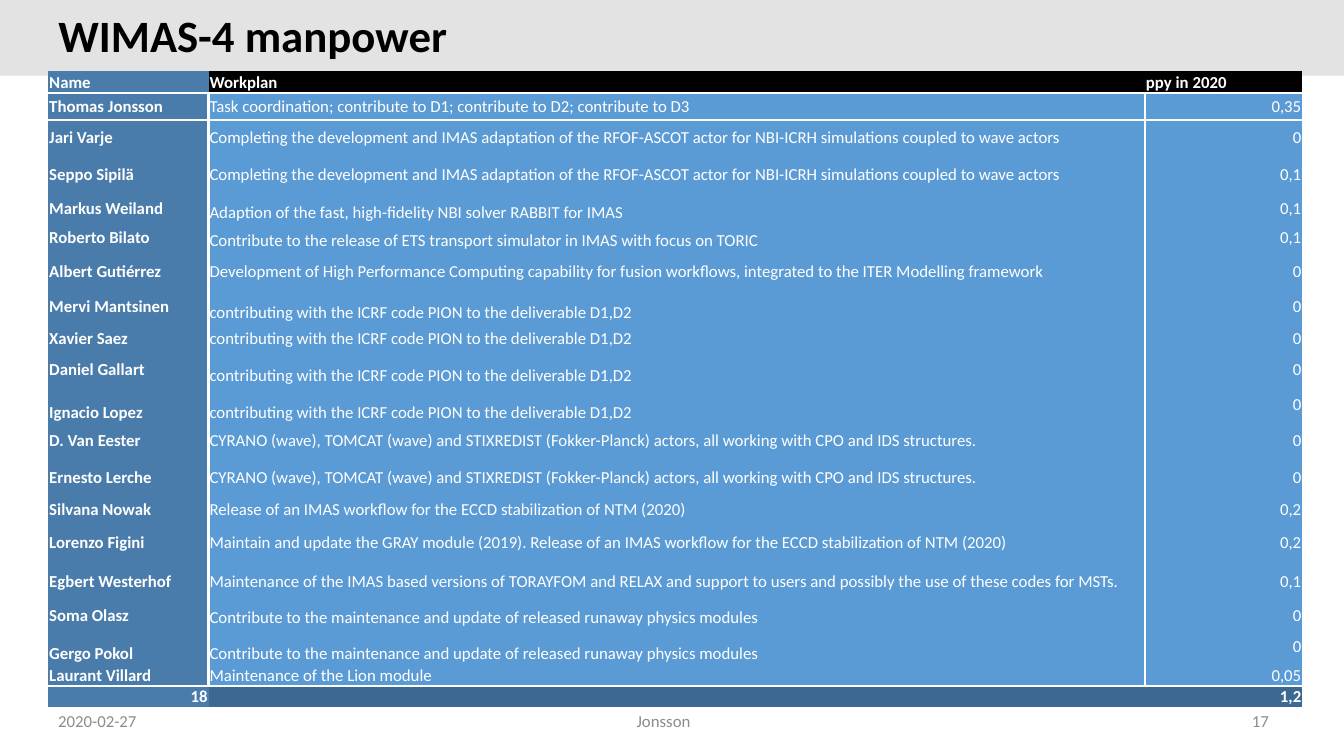
from pptx import Presentation
from pptx import util as u
from pptx.dml import color
from pptx.enum import shapes, text
from pptx.oxml import parse_xml
from pptx.oxml import ns

Pt = u.Pt
LEFT, MID, RIGHT = text.PP_ALIGN.LEFT, text.PP_ALIGN.CENTER, text.PP_ALIGN.RIGHT
ANCHORS = {"m": text.MSO_ANCHOR.MIDDLE, "b": text.MSO_ANCHOR.BOTTOM}
PLAIN = "{2D5ABB26-0587-4C30-8999-92F81FD0307C}"
WHITE, BLACK, NAVY, BLUE, DEEP = "FFFFFF", "000000", "497CAB", "5B9BD5", "3D688F"

NBI = "Completing the development and IMAS adaptation of the RFOF-ASCOT actor for NBI-ICRH simulations coupled to wave actors"
PION = "contributing with the ICRF code PION to the deliverable D1,D2"
WAVE = "CYRANO (wave), TOMCAT (wave) and STIXREDIST (Fokker-Planck) actors, all working with CPO and IDS structures."
RUN = "Contribute to the maintenance and update of released runaway physics modules"
STAFF = [
    ("Thomas Jonsson", "Task coordination; contribute to D1; contribute to D2; contribute to D3", "0,35", "mmm", 19.4),
    ("Jari Varje", NBI, "0", "mmm", 24.5),
    ("Seppo Sipilä", NBI, "0,1", "mmm", 28.1),
    ("Markus Weiland", "Adaption of the fast, high-fidelity NBI solver RABBIT for IMAS", "0,1", "mbm", 20.9),
    ("Roberto Bilato", "Contribute to the release of ETS transport simulator in IMAS with focus on TORIC", "0,1", "mbm", 20.2),
    ("Albert Gutiérrez", "Development of High Performance Computing capability for fusion workflows, integrated to the ITER Modelling framework", "0", "mmm", 28.1),
    ("Mervi Mantsinen", PION, "0", "mbm", 23),
    ("Xavier Saez", PION, "0", "mmm", 21.6),
    ("Daniel Gallart", PION, "0", "mbm", 23.8),
    ("Ignacio Lopez", PION, "0", "bbm", 25.9),
    ("D. Van Eester", WAVE, "0", "mmm", 25.9),
    ("Ernesto Lerche", WAVE, "0", "mmm", 25.9),
    ("Silvana Nowak", "Release of an IMAS workflow for the ECCD stabilization of NTM (2020)", "0,2", "mmm", 20.2),
    ("Lorenzo Figini", "Maintain and update the GRAY module (2019). Release of an IMAS workflow for the ECCD stabilization of NTM (2020)", "0,2", "mmm", 26.6),
    ("Egbert Westerhof", "Maintenance of the IMAS based versions of TORAYFOM and RELAX and support to users and possibly the use of these codes for MSTs.", "0,1", "mmm", 29.5),
    ("Soma Olasz", RUN, "0", "mbm", 18.7),
    ("Gergo Pokol", RUN, "0", "bbm", 25.9),
    ("Laurant Villard", "Maintenance of the Lion module", "0,05", "mbm", 15.4),
]
HEAD = ("Name", "Workplan", "ppy in 2020", "bbb", 15.5)
TOTAL = ("18", "", "1,2", "bbb", 15.5)


def rgb(code):
    return color.RGBColor.from_string(code)


def style(para, size, code, bold=False, align=LEFT):
    para.alignment = align
    for run in para.runs:
        run.font.name = "Calibri"
        run.font.size = Pt(size)
        run.font.bold = bold
        run.font.color.rgb = rgb(code)


def add_band(slide):
    band = slide.shapes.add_shape(shapes.MSO_SHAPE.RECTANGLE, 0, 0, Pt(960), Pt(54))
    band.shadow.inherit = False
    band.fill.solid()
    band.fill.fore_color.rgb = rgb("E3E3E3")
    band.line.fill.background()
    slide.shapes._spTree.insert(2, band._element)


def set_title(slide, words):
    title = slide.shapes.title
    title.left, title.top, title.width, title.height = Pt(34.5), Pt(9.4), Pt(831), Pt(35.3)
    frame = title.text_frame
    frame.text = words
    frame.vertical_anchor = ANCHORS["m"]
    para = frame.paragraphs[0]
    para.line_spacing = 0.9
    style(para, 32, BLACK, True)


def add_note(slide, words, left, width, align):
    frame = slide.shapes.add_textbox(Pt(left), Pt(500.4), Pt(width), Pt(28.8)).text_frame
    frame.word_wrap = True
    frame.vertical_anchor = ANCHORS["m"]
    frame.text = words
    style(frame.paragraphs[0], 12, "8C8C8C", align=align)


def add_edge(cell, side):
    cell._tc.get_or_add_tcPr().append(parse_xml(
        f'<a:ln{side} {ns.nsdecls("a")} w="25400"><a:solidFill>'
        f'<a:srgbClr val="{WHITE}"/></a:solidFill></a:ln{side}>'))


def fill_cell(cell, words, anchor, code, bold, align, edges):
    cell.margin_left = cell.margin_right = cell.margin_top = Pt(0.7)
    cell.margin_bottom = 0
    cell.vertical_anchor = ANCHORS[anchor]
    para = cell.text_frame.paragraphs[0]
    if words:
        para.text = words
        style(para, 12, WHITE, bold, align)
    else:
        para._p.get_or_add_endParaRPr().set("sz", "1200")
    for side in edges:
        add_edge(cell, side)
    cell.fill.solid()
    cell.fill.fore_color.rgb = rgb(code)


def add_staff(slide):
    rows = [HEAD, *STAFF, TOTAL]
    last = len(rows) - 1
    high = sum(row[4] for row in rows)
    frame = slide.shapes.add_table(len(rows), 3, Pt(34.5), Pt(51), Pt(895.7), Pt(high))
    for tag in frame._element.iter(ns.qn("a:tableStyleId")):
        tag.text = PLAIN
    table = frame.table
    table.horz_banding = False
    for col, width in zip(table.columns, (114.5, 668.9, 112.3)):
        col.width = Pt(width)
    for r, row in enumerate(rows):
        table.rows[r].height = Pt(row[4])
        body = 0 < r < last
        tone = BLUE if body else BLACK if r == 0 else DEEP
        for c in range(3):
            edges = ["R"] if body and c == 0 else ["L"] if body and c == 1 else []
            edges += ["T"] if r in (1, last) else []
            edges += ["B"] if r in (0, last - 1) else []
            right = r > 0 and c == 2 or r == last
            fill_cell(table.cell(r, c), row[c], row[3][c], tone if c else NAVY,
                      c == 0 or not body, RIGHT if right else LEFT, edges)


def main():
    deck = Presentation()
    deck.slide_width, deck.slide_height = Pt(960), Pt(540)
    slide = deck.slides.add_slide(deck.slide_layouts[5])
    add_band(slide)
    set_title(slide, "WIMAS-4 manpower")
    add_staff(slide)
    add_note(slide, "2020-02-27", 34.5, 216, LEFT)
    add_note(slide, "Jonsson", 312, 324, MID)
    add_note(slide, "17", 697.5, 216, RIGHT)
    deck.save("out.pptx")


if __name__ == "__main__":
    main()
